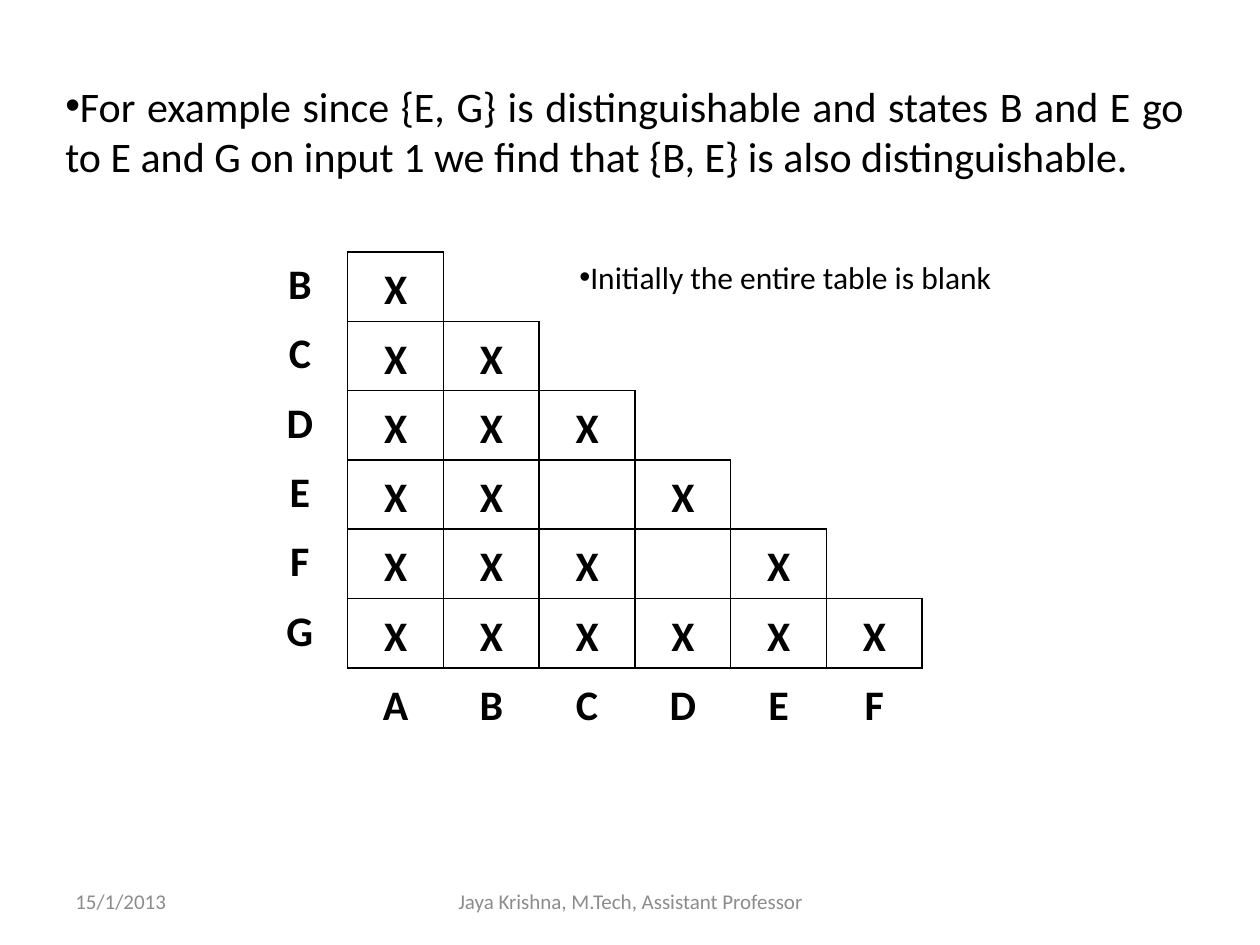
from lxml import etree
from pptx import Presentation
from pptx.dml.color import RGBColor
from pptx.enum.text import MSO_ANCHOR, MSO_AUTO_SIZE, PP_ALIGN
from pptx.oxml.ns import qn
from pptx.util import Inches, Pt

LEFT, CENTER, JUSTIFY = PP_ALIGN.LEFT, PP_ALIGN.CENTER, PP_ALIGN.JUSTIFY
TOP, MIDDLE = MSO_ANCHOR.TOP, MSO_ANCHOR.MIDDLE
GROW, FIXED = MSO_AUTO_SIZE.SHAPE_TO_FIT_TEXT, MSO_AUTO_SIZE.NONE

# Content
STATES = "ABCDEFG"
EQUIVALENT = {("E", "C"), ("F", "D")}  # pairs left unmarked
TEXTS = [
    dict(text="15/1/2013", at=(0.5, 6.95, 2.33, 0.4), style="footer"),
    dict(text="Jaya Krishna, M.Tech, Assistant Professor",
         at=(3.42, 6.95, 3.17, 0.4), style="footer", align=CENTER),
    dict(text="For example since {E, G} is distinguishable and states B and E go "
              "to E and G on input 1 we find that {B, E} is also distinguishable.",
         at=(0.42, 0.58, 9.08, 0.91), style="body", align=JUSTIFY,
         bullet=True, fit=GROW),
    dict(text="Initially the entire table is blank", at=(4.5, 2, 3.51, 0.4),
         style="note", anchor=TOP, bullet=True, fit=GROW, wrap=False),
]

# Theme and grid
BLACK = RGBColor(0, 0, 0)
GREY = RGBColor(0x8C, 0x8C, 0x8C)
THEME = {
    "footer": dict(size=Pt(12), color=GREY),
    "body": dict(size=Pt(24), color=BLACK),
    "note": dict(size=Pt(18), color=BLACK),
    "mark": dict(size=Pt(24), color=BLACK, bold=True),
}
FONT = "Calibri"
GRID_LEFT, GRID_TOP, COL_W, ROW_H = 2, 2, 0.76, 0.55
STEPS = len(STATES) - 1
ROWS, COLS = STEPS + 1, STEPS + 2
SIDES = {"lnL": (0, -1), "lnR": (0, 1), "lnT": (-1, 0), "lnB": (1, 0)}


def write(tf, text, style, align):
    p = tf.paragraphs[0]
    p.alignment = align
    r = p.add_run()
    r.text = text
    fmt = dict(THEME[style], name=FONT)
    r.font.color.rgb = fmt.pop("color")
    for key, value in fmt.items():
        setattr(r.font, key, value)
    return p


def add_text(s, text, at, style, align=LEFT, anchor=MIDDLE,
             bullet=False, fit=FIXED, wrap=True):
    tf = s.shapes.add_textbox(*map(Inches, at)).text_frame
    for key, value in dict(word_wrap=wrap, auto_size=fit,
                           vertical_anchor=anchor).items():
        setattr(tf, key, value)
    p = write(tf, text, style, align)
    if bullet:
        pPr = p._p.get_or_add_pPr()
        etree.SubElement(pPr, qn("a:buFont"), typeface="Arial")
        etree.SubElement(pPr, qn("a:buChar"), char="•")


def is_box(row, col):
    return row < STEPS and 1 <= col <= row + 1


def cell_text(row, col):
    if is_box(row, col):
        pair = STATES[row + 1], STATES[col - 1]
        return "" if pair in EQUIVALENT else "X"
    if col == 0 and row < STEPS:
        return STATES[row + 1]
    if row == STEPS and 1 <= col <= STEPS:
        return STATES[col - 1]
    return ""


def set_borders(cell, row, col):
    tcPr = cell._tc.get_or_add_tcPr()
    for i, (tag, (dr, dc)) in enumerate(SIDES.items()):
        ln = etree.Element(qn("a:" + tag), w=str(Pt(1)))
        if is_box(row, col) or is_box(row + dr, col + dc):
            fill = etree.SubElement(ln, qn("a:solidFill"))
            etree.SubElement(fill, qn("a:srgbClr"), val=str(BLACK))
        else:
            etree.SubElement(ln, qn("a:noFill"))
        tcPr.insert(i, ln)


def add_pair_table(s):
    table = s.shapes.add_table(
        ROWS, COLS, Inches(GRID_LEFT), Inches(GRID_TOP),
        Inches(COLS * COL_W), Inches(ROWS * ROW_H)).table
    table.first_row = table.horz_banding = False
    for column in table.columns:
        column.width = Inches(COL_W)
    for row in range(ROWS):
        table.rows[row].height = Inches(ROW_H)
        for col in range(COLS):
            cell = table.cell(row, col)
            cell.fill.background()
            set_borders(cell, row, col)
            text = cell_text(row, col)
            if text:
                cell.margin_left = cell.margin_right = Inches(0.07)
                cell.margin_top = cell.margin_bottom = 0
                cell.vertical_anchor = MIDDLE if col else TOP
                write(cell.text_frame, text, "mark", CENTER).line_spacing = 1.15
    # Empty upper right part: one merged cell per row
    for row in range(COLS - 4):
        table.cell(row, row + 3).merge(table.cell(row, COLS - 1))


def main():
    prs = Presentation()
    prs.slide_width, prs.slide_height = Inches(10), Inches(7.5)
    s = prs.slides.add_slide(prs.slide_layouts[6])
    add_pair_table(s)
    for item in TEXTS:
        add_text(s, **item)
    prs.save("out.pptx")


if __name__ == "__main__":
    main()
